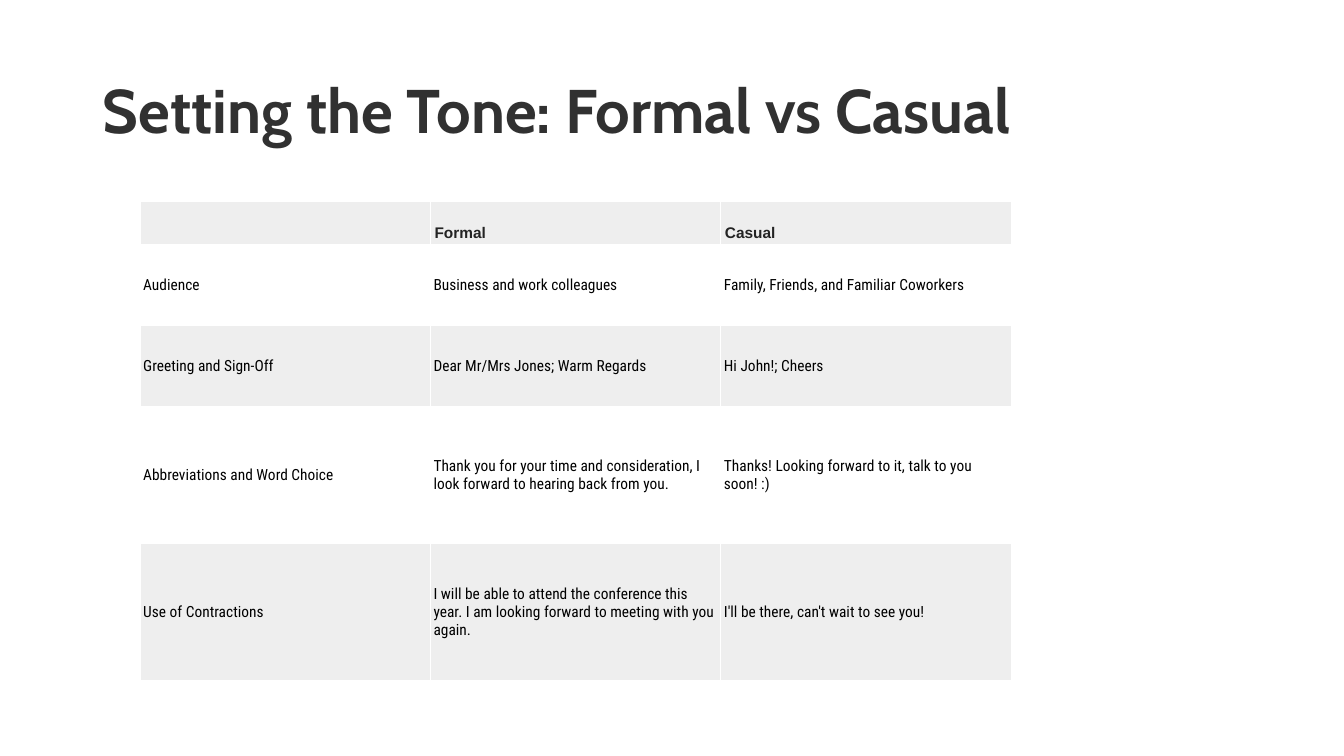
"""Build a slide that compares formal and casual tone in a banded table."""
from dataclasses import dataclass

from pptx import Presentation
from pptx.dml.color import RGBColor
from pptx.enum.text import MSO_ANCHOR, MSO_AUTO_SIZE, PP_ALIGN
from pptx.util import Inches, Pt


@dataclass(frozen=True)
class Theme:
    title_font: str = "Cabin"
    header_font: str = "Arial"
    body_font: str = "Roboto Condensed"
    title_size: int = 44
    table_size: int = 11
    title_color: str = "313131"
    header_color: str = "232323"
    body_color: str = "000000"
    bands: tuple = ("EEEEEE", "FFFFFF")


def style(paragraph, name, size, color, bold):
    paragraph.font.name = name
    paragraph.font.size = Pt(size)
    paragraph.font.bold = bold
    paragraph.font.color.rgb = RGBColor.from_string(color)


theme = Theme()
column_width = 2.88
row_heights = [0.43, 0.8, 0.8, 1.36, 1.36]
comparison = [
    ["", "Formal", "Casual"],
    ["Audience", "Business and work colleagues", "Family, Friends, and Familiar Coworkers"],
    ["Greeting and Sign-Off", "Dear Mr/Mrs Jones; Warm Regards", "Hi John!; Cheers"],
    ["Abbreviations and Word Choice",
     "Thank you for your time and consideration, I look forward to hearing back from you.",
     "Thanks! Looking forward to it, talk to you soon! :)"],
    ["Use of Contractions",
     "I will be able to attend the conference this year. "
     "I am looking forward to meeting with you again.",
     "I'll be there, can't wait to see you!"],
]

deck = Presentation()
deck.slide_width, deck.slide_height = Inches(13.33), Inches(7.5)
page = deck.slides.add_slide(deck.slide_layouts[5])

title = page.shapes.title
title.left, title.top = Inches(0.92), Inches(0.4)
title.width, title.height = Inches(11.5), Inches(1.45)
title.text_frame.text = "Setting the Tone: Formal vs Casual"
title.text_frame.auto_size = MSO_AUTO_SIZE.NONE
title.text_frame.vertical_anchor = MSO_ANCHOR.MIDDLE
heading = title.text_frame.paragraphs[0]
heading.alignment = PP_ALIGN.LEFT
heading.line_spacing = 0.9
style(heading, theme.title_font, theme.title_size, theme.title_color, True)

columns = len(comparison[0])
table = page.shapes.add_table(
    len(comparison), columns, Inches(1.39), Inches(2),
    Inches(columns * column_width), Inches(sum(row_heights))).table
for column in table.columns:
    column.width = Inches(column_width)

for row_index, (texts, height) in enumerate(zip(comparison, row_heights)):
    is_header = row_index == 0
    table.rows[row_index].height = Inches(height)
    for column_index, text in enumerate(texts):
        cell = table.cell(row_index, column_index)
        cell.text = text
        cell.fill.solid()
        cell.fill.fore_color.rgb = RGBColor.from_string(theme.bands[row_index % 2])
        cell.vertical_anchor = MSO_ANCHOR.BOTTOM if is_header else MSO_ANCHOR.MIDDLE
        cell.margin_left = Inches(0.04 if is_header else 0.03)
        cell.margin_right = Inches(0.09 if is_header else 0.03)
        cell.margin_top = cell.margin_bottom = Inches(0.03)
        style(cell.text_frame.paragraphs[0],
              theme.header_font if is_header else theme.body_font, theme.table_size,
              theme.header_color if is_header else theme.body_color, is_header)

deck.save("out.pptx")
